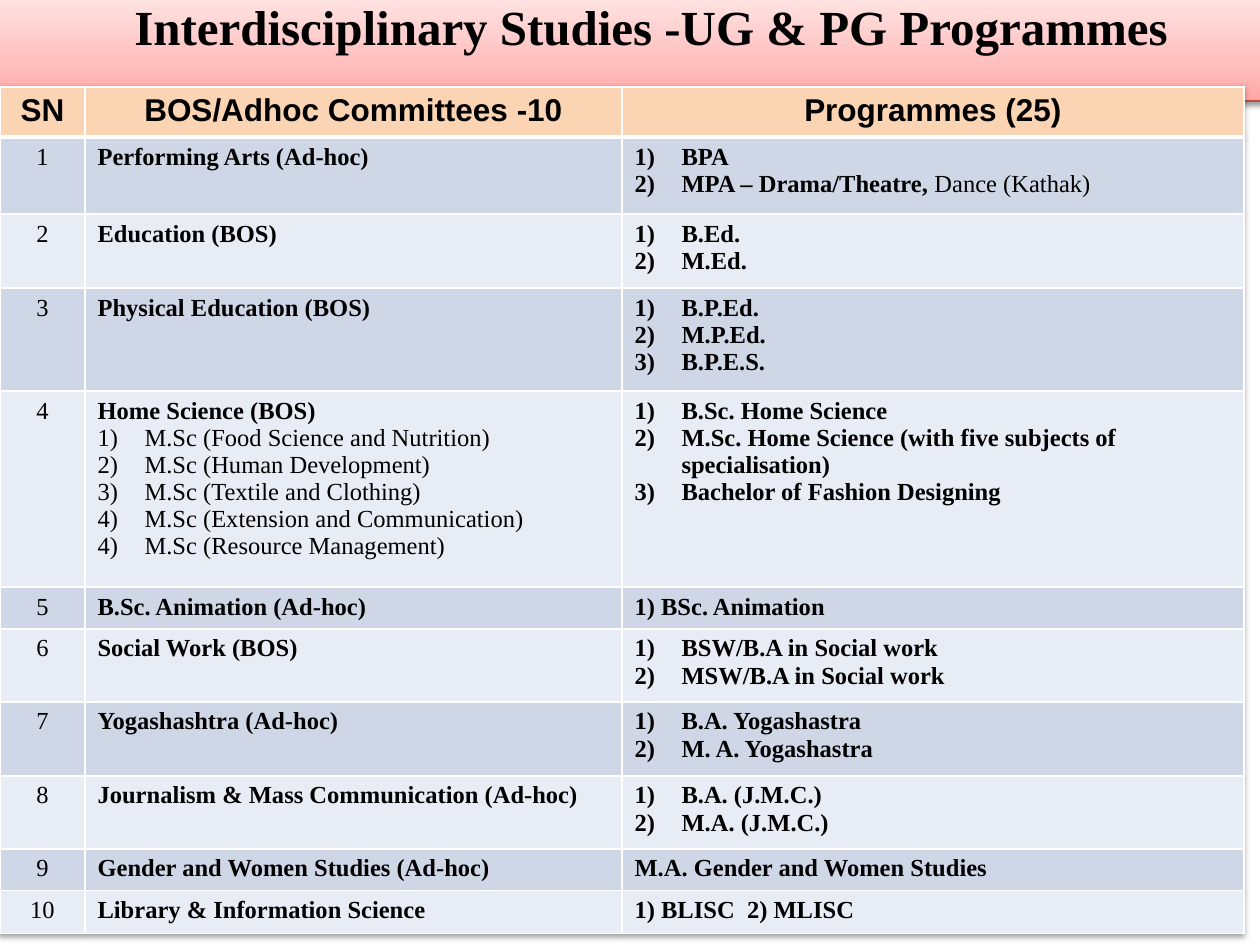
from lxml.etree import SubElement
from pptx import Presentation
from pptx.dml.color import RGBColor
from pptx.enum.shapes import MSO_SHAPE
from pptx.enum.text import MSO_ANCHOR, PP_ALIGN
from pptx.oxml.ns import qn
from pptx.util import Pt

SCALE = 914400 // 126
SERIF, SANS = "Times New Roman", "Arial"
TITLE = "Interdisciplinary Studies -UG & PG Programmes"
TITLE_BOX = (-84, -10, 1470, 111)
TITLE_STOPS = ((0, "FFA6A5"), (35, "FFC0BF"), (100, "FFE7E7"))
HEADERS = ("SN", "BOS/Adhoc Committees -10", "Programmes (25)")
HEADER_FILL, BAND_FILLS = "FBD4B4", ("CFD7E7", "E8ECF4")
TABLE_LEFT, TABLE_TOP = 0, 87
COLUMN_WIDTHS = (85, 537, 622)
ROW_HEIGHTS = (50, 77, 74, 103, 196, 42, 73, 74, 73, 42, 43)
HANG = 47

# committee, programmes: a list is numbered, a string stands alone
COMMITTEES = [
    ("Performing Arts (Ad-hoc)", ["BPA", ("MPA – Drama/Theatre, ", "Dance (Kathak)")]),
    ("Education (BOS)", ["B.Ed.", "M.Ed."]),
    ("Physical Education (BOS)", ["B.P.Ed.", "M.P.Ed.", "B.P.E.S."]),
    ("Home Science (BOS)", ["B.Sc. Home Science",
                            "M.Sc. Home Science (with five subjects of specialisation)",
                            "Bachelor of Fashion Designing"]),
    ("B.Sc. Animation (Ad-hoc)", "1) BSc. Animation"),
    ("Social Work (BOS)", ["BSW/B.A in Social work", "MSW/B.A in Social work"]),
    ("Yogashashtra (Ad-hoc)", ["B.A. Yogashastra", "M. A. Yogashastra"]),
    ("Journalism & Mass Communication (Ad-hoc)", ["B.A. (J.M.C.)", "M.A. (J.M.C.)"]),
    ("Gender and Women Studies (Ad-hoc)", "M.A. Gender and Women Studies"),
    ("Library & Information Science", "1) BLISC  2) MLISC"),
]
SUBJECTS = {"Home Science (BOS)": [
    ("1)\tM.Sc (Food Science and Nutrition)", None),
    ("2)\tM.Sc (Human Development)", None),
    ("M.Sc (Textile and Clothing)", 3),
    ("M.Sc (Extension and Communication)", 3),
    ("M.Sc (Resource Management)", 4),
]}


def px(length):
    """Turn pixels into EMU."""
    return length * SCALE


def color(value):
    """Turn a hex string into a colour."""
    return RGBColor.from_string(value)


def add_node(parent, tag, **attributes):
    """Append a drawing element with its attributes."""
    return SubElement(parent, qn(tag), {name: str(value) for name, value in attributes.items()})


def write(paragraph, text, size=14, font=SERIF, bold=True, align=None, hang=0, start=None):
    """Write text in a paragraph; a second part of a tuple is not bold."""
    parts = (text,) if isinstance(text, str) else text
    for index, part in enumerate(parts):
        run = paragraph.add_run()
        run.text = part
        run.font.size, run.font.name = Pt(size), font
        run.font.bold = bold and index == 0
        run.font.color.rgb = color("000000")
    paragraph.alignment = align
    if hang:
        properties = paragraph._p.get_or_add_pPr()
        properties.set("marL", str(px(hang)))
        properties.set("indent", str(-px(hang)))
        if start:
            bullet_color = add_node(properties, "a:buClr")
            add_node(bullet_color, "a:srgbClr", val="000000")
            add_node(properties, "a:buFont", typeface="+mj-lt")
            add_node(properties, "a:buAutoNum", type="arabicParenR", startAt=start)


def add_shadow(effects):
    """Put a soft downward shadow in an effect list."""
    shadow = add_node(effects, "a:outerShdw", blurRad=Pt(3.1), dist=Pt(1.6),
                      dir=5400000, rotWithShape=0)
    add_node(add_node(shadow, "a:srgbClr", val="000000"), "a:alpha", val=38000)


def add_title(slide):
    """Draw the title band."""
    band = slide.shapes.add_shape(MSO_SHAPE.RECTANGLE, *map(px, TITLE_BOX))
    band.fill.gradient()
    band.fill.gradient_angle = 90
    stops = band._element.spPr.find(".//" + qn("a:gsLst"))
    for stop in list(stops):
        stops.remove(stop)
    for position, value in TITLE_STOPS:
        add_node(add_node(stops, "a:gs", pos=position * 1000), "a:srgbClr", val=value)
    band.line.color.rgb, band.line.width = color("BF4C48"), Pt(0.75)
    band.shadow.inherit = False
    add_shadow(band._element.spPr.find(qn("a:effectLst")))
    frame = band.text_frame
    frame.word_wrap, frame.vertical_anchor = True, MSO_ANCHOR.TOP
    write(frame.paragraphs[0], TITLE, size=28, align=PP_ALIGN.CENTER)


def format_cell(cell, fill, bottom=1):
    """Give a cell white borders and a plain fill."""
    properties = cell._tc.get_or_add_tcPr()
    for side, width in (("L", 1), ("R", 1), ("T", 1), ("B", bottom)):
        line = add_node(properties, "a:ln" + side, w=Pt(width))
        add_node(add_node(line, "a:solidFill"), "a:srgbClr", val="FFFFFF")
    cell.fill.solid()
    cell.fill.fore_color.rgb = color(fill)


def fill_cell(cell, entries):
    """Write one paragraph for each pair of text and format."""
    frame = cell.text_frame
    for index, (text, style) in enumerate(entries):
        write(frame.add_paragraph() if index else frame.paragraphs[0], text, **style)


def add_committee_table(slide):
    """Draw the table of committees and their programmes."""
    frame = slide.shapes.add_table(len(ROW_HEIGHTS), len(COLUMN_WIDTHS),
                                   px(TABLE_LEFT), px(TABLE_TOP),
                                   px(sum(COLUMN_WIDTHS)), px(sum(ROW_HEIGHTS)))
    table = frame.table
    effects = add_node(table._tbl.tblPr, "a:effectLst")
    add_shadow(effects)
    table._tbl.tblPr.insert(0, effects)
    for column, width in zip(table.columns, COLUMN_WIDTHS):
        column.width = px(width)
    for row, height in zip(table.rows, ROW_HEIGHTS):
        row.height = px(height)

    for column, header in enumerate(HEADERS):
        cell = table.cell(0, column)
        format_cell(cell, HEADER_FILL, bottom=3)
        fill_cell(cell, [(header, dict(size=18, font=SANS, align=PP_ALIGN.CENTER))])

    for number, (committee, programmes) in enumerate(COMMITTEES, 1):
        subjects = [(text, dict(bold=False, hang=HANG, start=start))
                    for text, start in SUBJECTS.get(committee, [])]
        if isinstance(programmes, str):
            offered = [(programmes, {})]
        else:
            offered = [(text, dict(hang=HANG, start=1)) for text in programmes]
        columns = ([(str(number), dict(bold=False, align=PP_ALIGN.CENTER))],
                   [(committee, {})] + subjects, offered)
        for column, entries in enumerate(columns):
            cell = table.cell(number, column)
            format_cell(cell, BAND_FILLS[(number - 1) % 2])
            fill_cell(cell, entries)


def main():
    """Build and save the slide."""
    presentation = Presentation()
    presentation.slide_width, presentation.slide_height = px(1260), px(945)
    slide = presentation.slides.add_slide(presentation.slide_layouts[6])
    add_title(slide)
    add_committee_table(slide)
    presentation.save("out.pptx")


if __name__ == "__main__":
    main()
